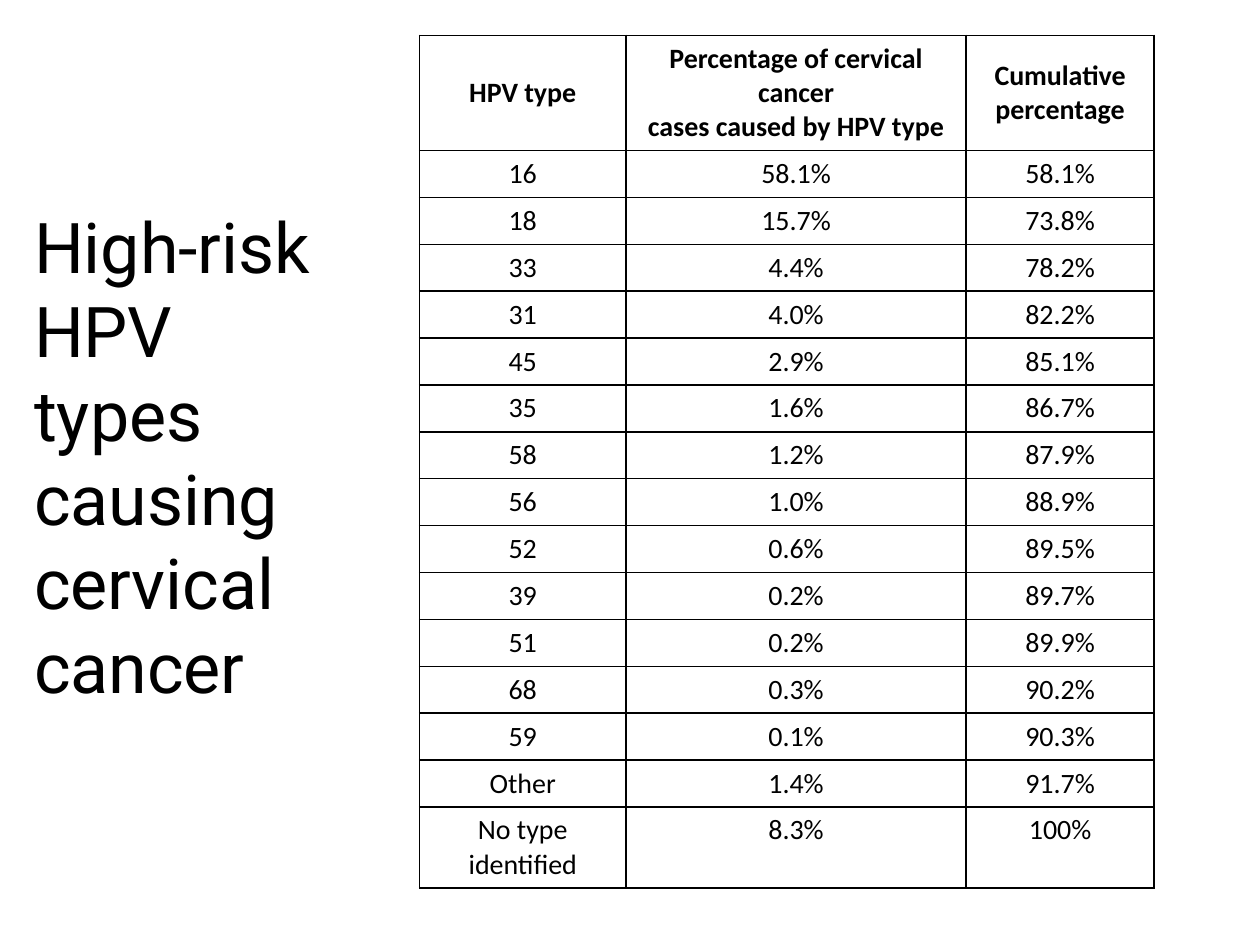
import pptx
import pptx.util
import pptx.dml.color
import pptx.enum.text
import pptx.oxml
import pptx.oxml.ns

Inches = pptx.util.Inches
Pt = pptx.util.Pt
MIDDLE = pptx.enum.text.MSO_ANCHOR.MIDDLE
TOP = pptx.enum.text.MSO_ANCHOR.TOP
CENTER = pptx.enum.text.PP_ALIGN.CENTER
LEFT = pptx.enum.text.PP_ALIGN.LEFT
BLACK = pptx.dml.color.RGBColor(0, 0, 0)
WHITE = pptx.dml.color.RGBColor(255, 255, 255)

TITLE = "High-risk HPV types causing cervical cancer"
TITLE_BOX = (0, 1.81, 2.75, 3.61)
TABLE_BOX = (3.33, 0.28, 5.83, 6.67)
COLUMN_SHARES = (0.281, 0.463, 0.256)
HEADER_HEIGHT, ROW_HEIGHT = 0.43, 0.29

HEADINGS = (
    "HPV type",
    "Percentage of cervical cancer\ncases caused by HPV type",
    "Cumulative percentage",
)
HPV_SHARES = (
    ("16", "58.1%", "58.1%"),
    ("18", "15.7%", "73.8%"),
    ("33", "4.4%", "78.2%"),
    ("31", "4.0%", "82.2%"),
    ("45", "2.9%", "85.1%"),
    ("35", "1.6%", "86.7%"),
    ("58", "1.2%", "87.9%"),
    ("56", "1.0%", "88.9%"),
    ("52", "0.6%", "89.5%"),
    ("39", "0.2%", "89.7%"),
    ("51", "0.2%", "89.9%"),
    ("68", "0.3%", "90.2%"),
    ("59", "0.1%", "90.3%"),
    ("Other", "1.4%", "91.7%"),
    ("No type identified", "8.3%", "100%"),
)


def apply(target, values):
    for name, value in values.items():
        setattr(target, name, value)


def format_text(frame, align, font):
    for paragraph in frame.paragraphs:
        paragraph.alignment = align
        for run in paragraph.runs:
            apply(run.font, font)
            run.font.color.rgb = BLACK


def add_borders(cell):
    properties = cell._tc.get_or_add_tcPr()
    for position, side in enumerate(("lnL", "lnR", "lnT", "lnB")):
        properties.insert(position, pptx.oxml.parse_xml(
            f'<a:{side} {pptx.oxml.ns.nsdecls("a")} w="{Pt(1)}">'
            f'<a:solidFill><a:srgbClr val="{BLACK}"/></a:solidFill></a:{side}>'))


def place_title(slide, box):
    left, top, width, height = map(Inches, box)
    heading = slide.shapes.title
    apply(heading, {"left": left, "top": top, "width": width, "height": height})
    heading.text_frame.text = TITLE
    apply(heading.text_frame, {
        "word_wrap": True,
        "vertical_anchor": MIDDLE,
        "auto_size": pptx.enum.text.MSO_AUTO_SIZE.NONE,
        "margin_left": Inches(0.27),
        "margin_right": Inches(0.2),
    })
    format_text(heading.text_frame, LEFT,
                {"name": "Roboto", "size": Pt(40), "bold": False})


def place_table(slide, box):
    rows = (HEADINGS,) + HPV_SHARES
    frame = slide.shapes.add_table(len(rows), len(HEADINGS), *map(Inches, box))
    table = frame.table
    apply(table, {"first_row": False, "horz_banding": False})
    for column, share in zip(table.columns, COLUMN_SHARES):
        column.width = Inches(box[2] * share)
    for index, values in enumerate(rows):
        is_header = index == 0
        table.rows[index].height = Inches(HEADER_HEIGHT if is_header else ROW_HEIGHT)
        for cell, value in zip(table.rows[index].cells, values):
            cell.text = value
            cell.vertical_anchor = MIDDLE if is_header else TOP
            cell.fill.solid()
            cell.fill.fore_color.rgb = WHITE
            add_borders(cell)
            format_text(cell.text_frame, CENTER,
                        {"name": "Calibri", "size": Pt(16), "bold": is_header})
    frame.height = Inches(box[3])


def main():
    deck = pptx.Presentation()
    apply(deck, {"slide_width": Inches(10), "slide_height": Inches(7.5)})
    slide = deck.slides.add_slide(deck.slide_layouts.get_by_name("Title Only"))
    place_title(slide, TITLE_BOX)
    place_table(slide, TABLE_BOX)
    deck.save("out.pptx")


if __name__ == "__main__":
    main()
